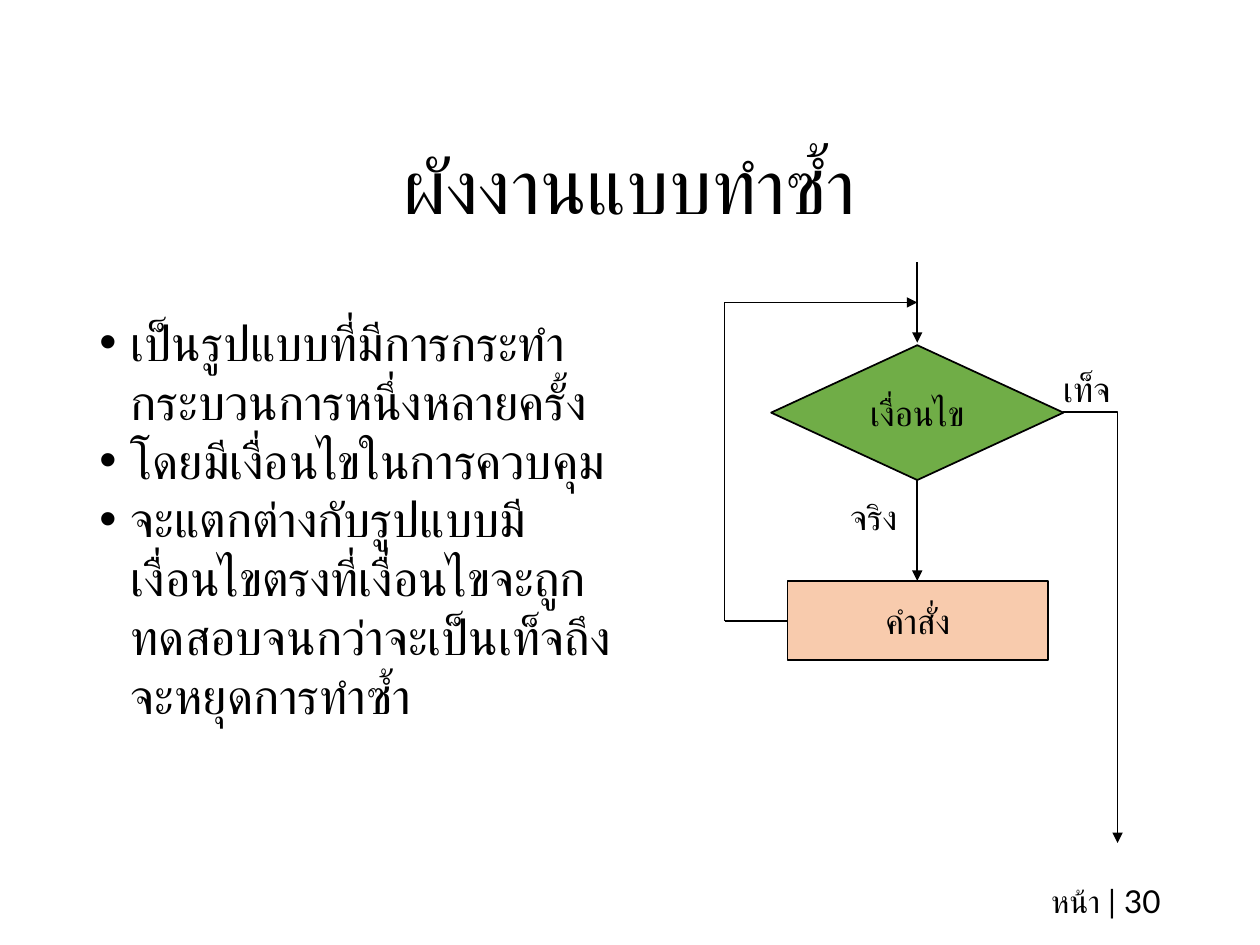
"""Build a slide that explains the repetition flowchart in Thai."""
import pptx
import pptx.dml.color
import pptx.enum.dml
import pptx.enum.lang
import pptx.enum.shapes
import pptx.enum.text
import pptx.oxml.ns
import pptx.util
from lxml import etree

Inches = pptx.util.Inches
Pt = pptx.util.Pt
qn = pptx.oxml.ns.qn
ALIGN = pptx.enum.text.PP_ALIGN
ANCHOR = pptx.enum.text.MSO_ANCHOR
SHAPE = pptx.enum.shapes.MSO_SHAPE
CONNECTOR = pptx.enum.shapes.MSO_CONNECTOR

FONT = "Lato"
COLORS = {"ink": "000000", "condition": "70AD47", "command": "F8CBAD"}
BULLETS = [
    "เป็นรูปแบบที่มีการกระทำกระบวนการหนึ่งหลายครั้ง",
    "โดยมีเงื่อนไขในการควบคุม",
    "จะแตกต่างกับรูปแบบมีเงื่อนไขตรงที่เงื่อนไขจะถูกทดสอบจนกว่าจะเป็นเท็จถึงจะหยุดการทำซ้ำ",
]
AXIS_X, LOOP_X, EXIT_X = 7.28, 5.75, 8.87
JOIN_Y, CONDITION_Y, COMMAND_Y = 2.4, 3.27, 4.93


def rgb(name):
    return pptx.dml.color.RGBColor.from_string(COLORS[name])


def add_run(p, text, size):
    r = p.add_run()
    r.text = text
    r.font.size = Pt(size)
    r.font.name = FONT
    r.font.language_id = pptx.enum.lang.MSO_LANGUAGE_ID.THAI
    r.font.color.rgb = rgb("ink")
    etree.SubElement(r.font._element, qn("a:cs"), typeface=FONT)


def write_line(tf, text, size, align=ALIGN.CENTER):
    tf.word_wrap = True
    tf.vertical_anchor = ANCHOR.MIDDLE
    p = tf.paragraphs[0]
    p.alignment = align
    add_run(p, text, size)
    return p


def add_label(s, box, text, size=20, align=ALIGN.CENTER):
    sp = s.shapes.add_textbox(*map(Inches, box))
    return write_line(sp.text_frame, text, size, align)


def add_bullets(s, box, items, size=28):
    tf = s.shapes.add_textbox(*map(Inches, box)).text_frame
    tf.word_wrap = True
    for i, item in enumerate(items):
        p = tf.add_paragraph() if i else tf.paragraphs[0]
        pPr = p._p.get_or_add_pPr()
        pPr.set("marL", str(Inches(0.25)))
        pPr.set("indent", str(-Inches(0.25)))
        etree.SubElement(pPr, qn("a:buFont"), typeface="Arial")
        etree.SubElement(pPr, qn("a:buChar"), char="•")
        add_run(p, item, size)


def add_node(s, kind, box, fill, text):
    sp = s.shapes.add_shape(kind, *map(Inches, box))
    sp.shadow.inherit = False
    sp.fill.solid()
    sp.fill.fore_color.rgb = rgb(fill)
    sp.line.color.rgb = rgb("ink")
    sp.line.width = Pt(1)
    write_line(sp.text_frame, text, 20)


def add_flow(s, start, end, arrow=True, bent=False):
    kind = CONNECTOR.ELBOW if bent else CONNECTOR.STRAIGHT
    cn = s.shapes.add_connector(kind, *map(Inches, start + end))
    cn.line.color.rgb = rgb("ink")
    cn.line.width = Pt(1)
    spPr = cn._element.spPr
    if bent:
        spPr.find(qn("a:prstGeom")).set("prst", "bentConnector2")
    if arrow:
        etree.SubElement(cn.line._get_or_add_ln(), qn("a:tailEnd"), type="triangle")
    etree.SubElement(spPr, qn("a:effectLst"))


def add_flowchart(s):
    add_label(s, (7.94, 2.79, 1.37, 0.58), "เท็จ")
    add_node(s, SHAPE.DIAMOND, (6.12, 2.74, 2.32, 1.07), "condition", "เงื่อนไข")
    add_flow(s, (AXIS_X, 3.81), (AXIS_X, 4.61))
    add_flow(s, (AXIS_X, 2.08), (AXIS_X, 2.72))
    add_node(s, SHAPE.RECTANGLE, (6.25, 4.61, 2.07, 0.63), "command", "คำสั่ง")
    add_label(s, (6.25, 3.81, 1.37, 0.58), "จริง")
    add_flow(s, (6.25, COMMAND_Y), (LOOP_X, COMMAND_Y), arrow=False)
    add_flow(s, (LOOP_X, COMMAND_Y), (LOOP_X, JOIN_Y), arrow=False)
    add_flow(s, (LOOP_X, JOIN_Y), (AXIS_X, JOIN_Y))
    add_flow(s, (8.44, CONDITION_Y), (EXIT_X, 6.69), bent=True)


def main():
    prs = pptx.Presentation()
    prs.slide_width, prs.slide_height = Inches(10), Inches(7.5)
    s = prs.slides.add_slide(prs.slide_layouts[6])
    title = add_label(s, (0.69, 0.78, 8.62, 1.45), "ผังงานแบบทำซ้ำ", 44)
    title.line_spacing = 0.9
    add_bullets(s, (0.69, 2.43, 4.48, 4.32), BULLETS)
    add_flowchart(s)
    add_label(s, (7.06, 6.95, 2.25, 0.4), "หน้า | 30", 18, ALIGN.RIGHT)
    prs.save("out.pptx")


if __name__ == "__main__":
    main()
